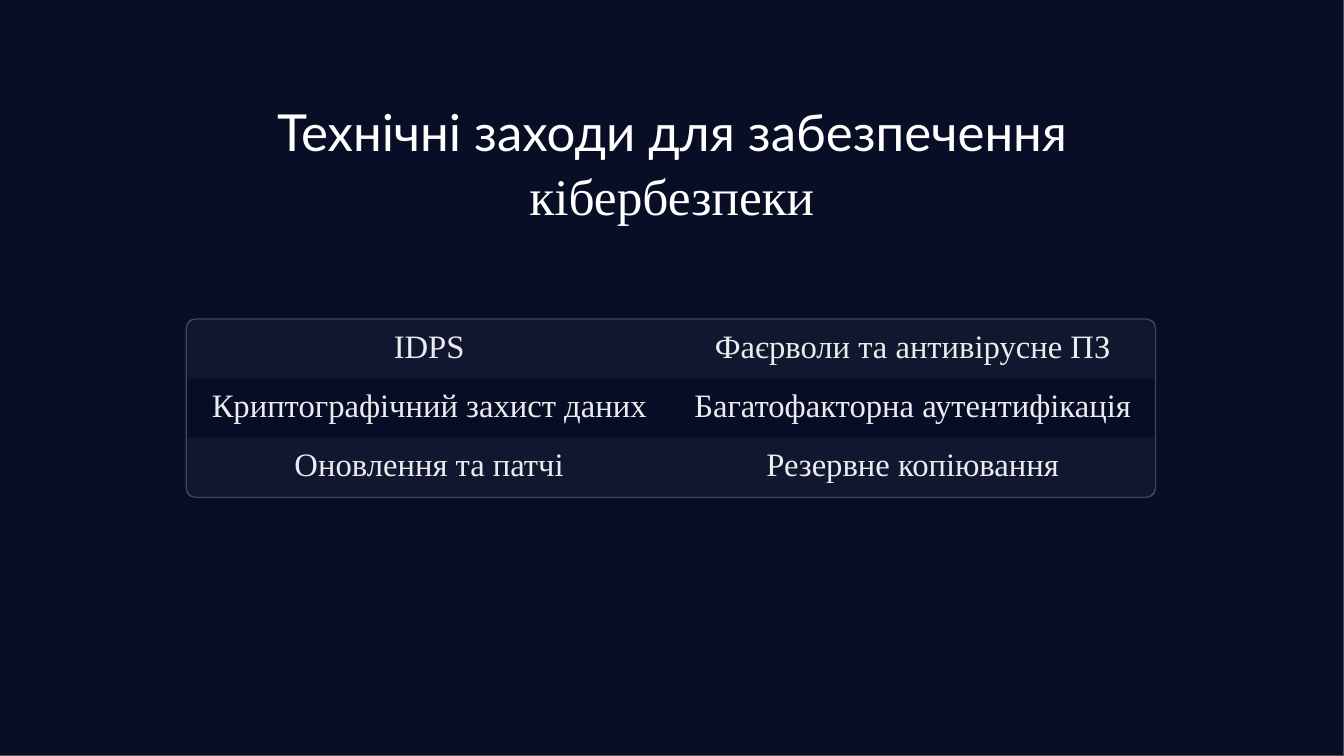
from lxml.etree import SubElement
from pptx import Presentation
from pptx.dml.color import RGBColor
from pptx.enum.shapes import MSO_SHAPE
from pptx.enum.text import MSO_ANCHOR, MSO_AUTO_SIZE, PP_ALIGN
from pptx.oxml.ns import qn
from pptx.util import Pt

TITLE = [("Технічні заходи для забезпечення ", "Lato", 43.7),
         ("кібербезпеки", "Times New Roman", 44)]
MEASURES = [
    ("IDPS", "Фаєрволи та антивірусне ПЗ"),
    ("Криптографічний захист даних", "Багатофакторна аутентифікація"),
    ("Оновлення та патчі", "Резервне копіювання"),
]

NAVY = RGBColor(0x08, 0x0E, 0x26)
EDGE = RGBColor(0x56, 0x51, 0x51)
WHITE = RGBColor(0xFF, 0xFF, 0xFF)
BLACK = RGBColor(0x00, 0x00, 0x00)
PALE = RGBColor(0xEB, 0xEC, 0xEF)
NO_STYLE_NO_GRID = "{2D5ABB26-0587-4C30-8999-92F81FD0307C}"

LEFT, TOP, WIDTH, ROW_H = 160.6, 274.4, 828.8, 50.3
FRAME_GAP = 1


def set_alpha(parent, percent):
    """Make the solid colour directly inside parent's solidFill translucent."""
    color = parent.find(qn("a:solidFill")).find(qn("a:srgbClr"))
    SubElement(color, qn("a:alpha")).set("val", str(percent * 1000))


def add_outline(s, preset, left, top, width, height, color):
    sp = s.shapes.add_shape(preset, Pt(left), Pt(top), Pt(width), Pt(height))
    sp.shadow.inherit = False
    sp.fill.background()
    sp.line.color.rgb = color
    sp.line.width = Pt(1.09)
    return sp


def format_run(r, font, size, color):
    r.font.name, r.font.size, r.font.color.rgb = font, Pt(size), color


def fill_title(title):
    title.left, title.top = Pt(LEFT), Pt(84.2)
    title.width, title.height = Pt(WIDTH + 2), Pt(109.4)
    tf = title.text_frame
    tf.word_wrap, tf.auto_size = True, MSO_AUTO_SIZE.NONE
    tf.vertical_anchor = MSO_ANCHOR.TOP
    tf.margin_left = tf.margin_right = tf.margin_top = tf.margin_bottom = 0
    p = tf.paragraphs[0]
    p.alignment, p.line_spacing = PP_ALIGN.CENTER, Pt(54.7)
    for text, font, size in TITLE:
        r = p.add_run()
        r.text = text
        format_run(r, font, size, WHITE)


def fill_cell(cell, text, shade):
    tc_pr = cell._tc.get_or_add_tcPr()
    for side in ("a:lnL", "a:lnR", "a:lnT", "a:lnB"):
        SubElement(SubElement(tc_pr, qn(side)), qn("a:noFill"))
    cell.fill.solid()
    cell.fill.fore_color.rgb = shade
    set_alpha(tc_pr, 4)
    cell.margin_left = cell.margin_right = Pt(17)
    cell.margin_top = cell.margin_bottom = 0
    cell.vertical_anchor = MSO_ANCHOR.MIDDLE
    cell.text_frame.text = text
    p = cell.text_frame.paragraphs[0]
    p.alignment, p.line_spacing = PP_ALIGN.CENTER, Pt(28)
    format_run(p.runs[0], "Times New Roman", 28, PALE)


def add_measures(s):
    height = ROW_H * len(MEASURES)
    frame = s.shapes.add_table(len(MEASURES), len(MEASURES[0]),
                               Pt(LEFT), Pt(TOP), Pt(WIDTH), Pt(height))
    table = frame.table
    table.first_row = table.horz_banding = False
    table._tbl.tblPr.find(qn("a:tableStyleId")).text = NO_STYLE_NO_GRID
    for i, row in enumerate(MEASURES):
        table.rows[i].height = Pt(ROW_H)
        for j, text in enumerate(row):
            fill_cell(table.cell(i, j), text, BLACK if i % 2 else WHITE)
    border = add_outline(s, MSO_SHAPE.ROUNDED_RECTANGLE,
                         LEFT - FRAME_GAP, TOP - FRAME_GAP,
                         WIDTH + 2 * FRAME_GAP, height + 2 * FRAME_GAP, WHITE)
    border.adjustments[0] = 0.052
    set_alpha(border.line._ln, 24)


def main():
    prs = Presentation()
    prs.slide_width, prs.slide_height = Pt(1152), Pt(648)
    s = prs.slides.add_slide(prs.slide_layouts[5])
    title = s.shapes.title
    fill_title(title)
    panel = add_outline(s, MSO_SHAPE.RECTANGLE, -1.5, -3.6, 1153.5, 651.6, EDGE)
    panel.fill.solid()
    panel.fill.fore_color.rgb = NAVY
    title._element.addprevious(panel._element)
    add_measures(s)
    prs.save("out.pptx")


if __name__ == "__main__":
    main()
